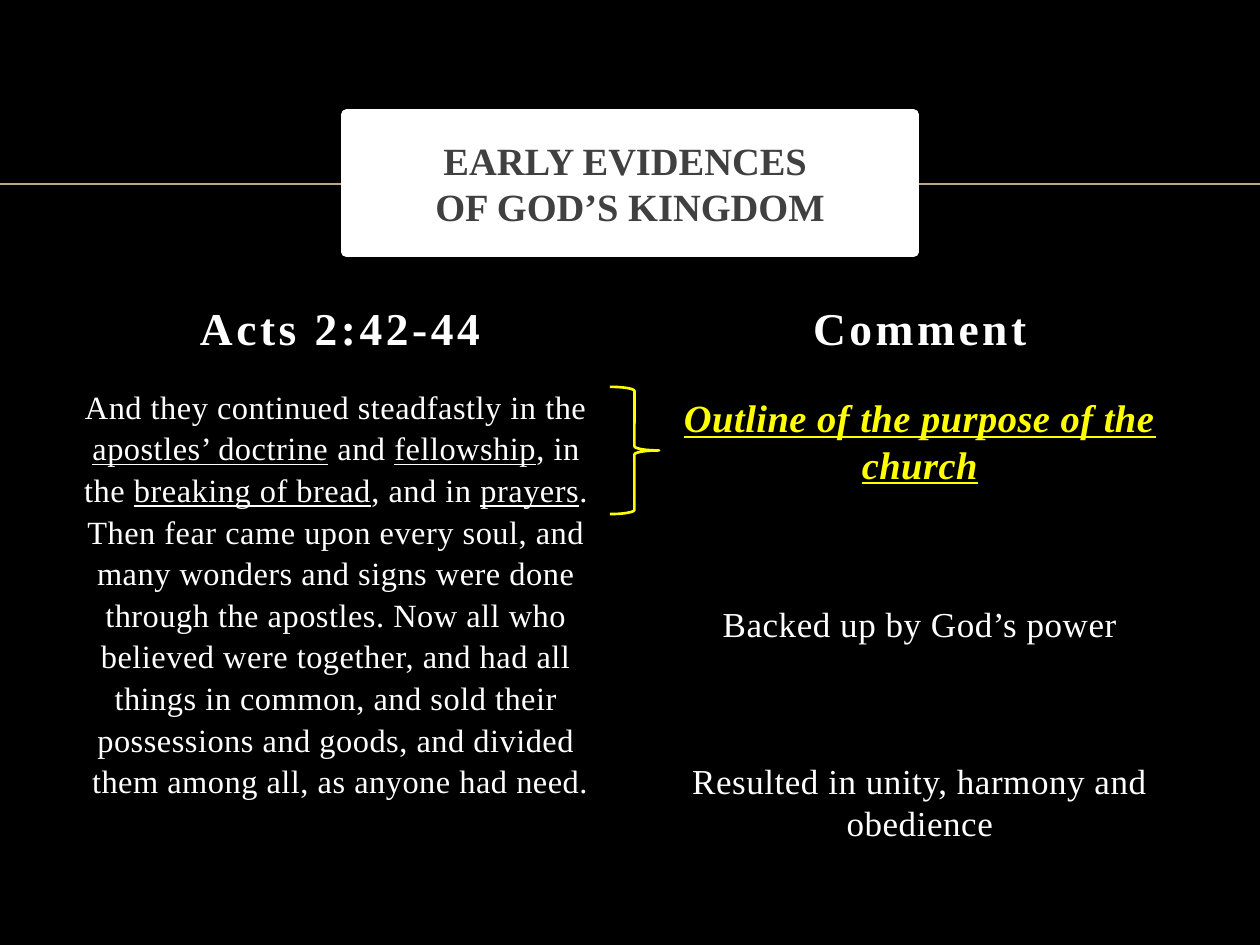
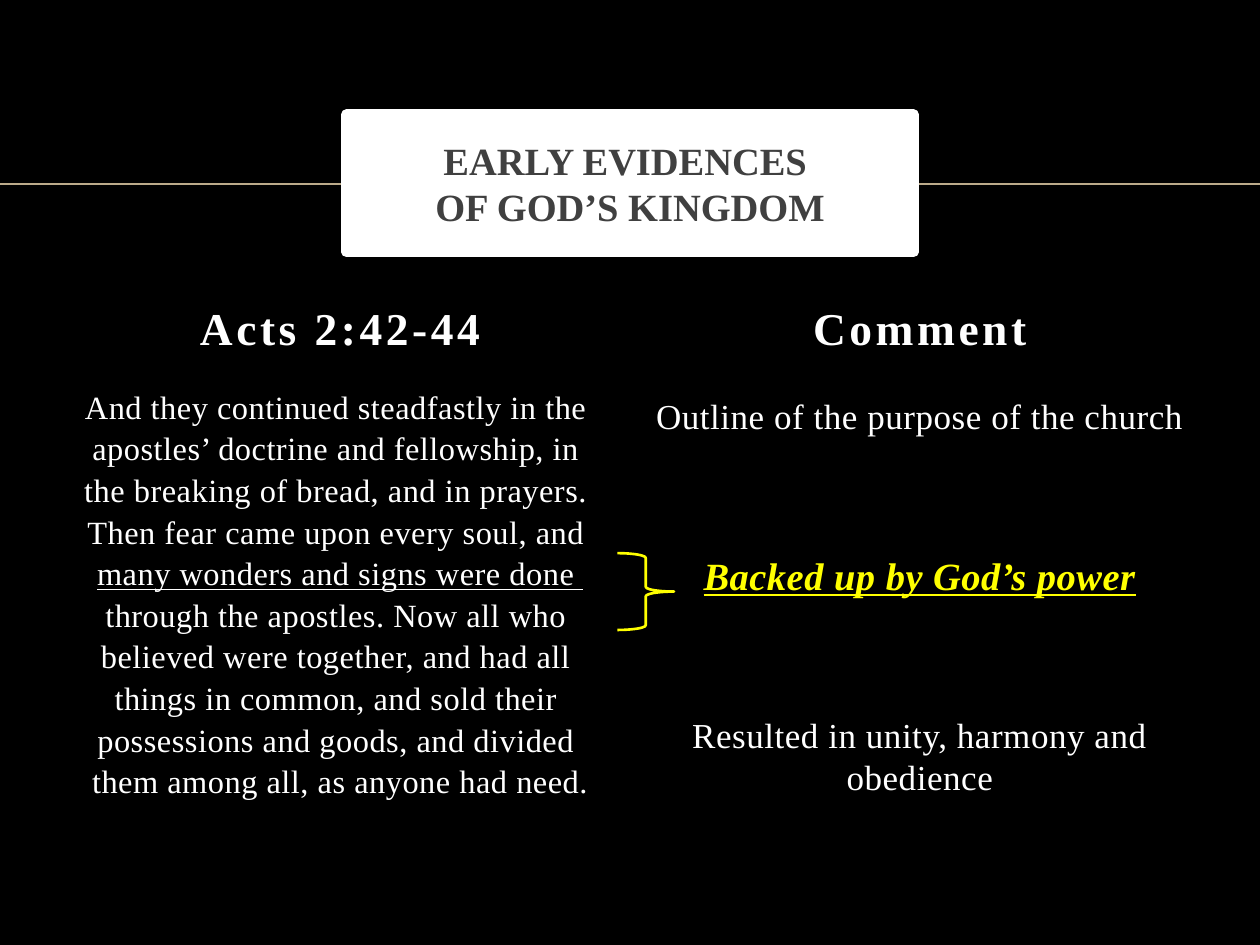
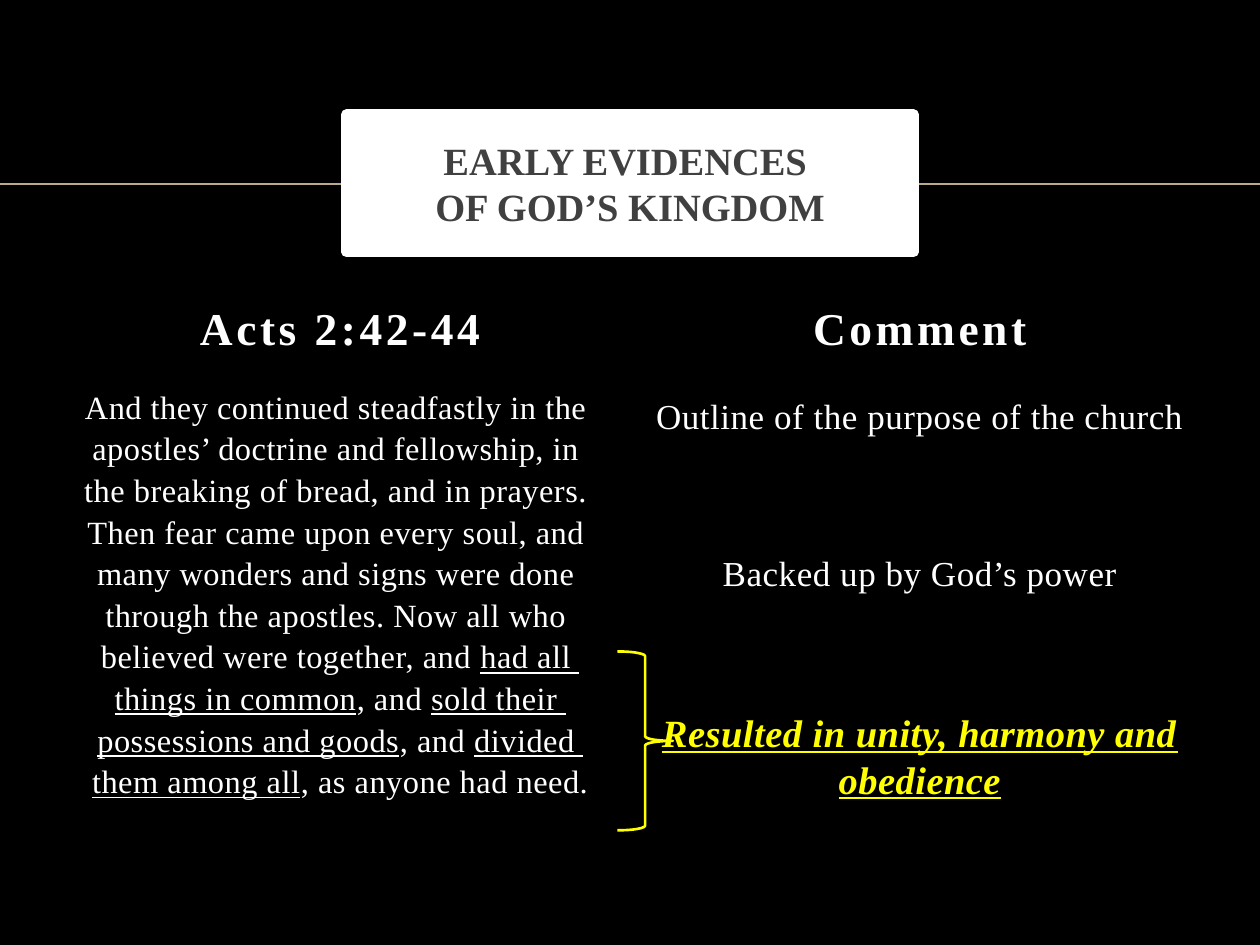
from dataclasses import dataclass

import pptx
import pptx.dml.color
import pptx.enum.shapes
import pptx.enum.text
import pptx.util
from lxml import etree
from pptx.oxml.ns import qn
from pptx.util import Inches

COLORS = {
    "background": "000000",
    "text": "FFFFFF",
    "title": "404040",
    "rule": "BBAA8A",
    "highlight": "FFFF00",
}
FONT = "Times New Roman"
COMPARISON_LAYOUT = 4

TITLE = "EARLY EVIDENCES \vOF GOD’S KINGDOM"
PASSAGE = (
    "And they continued steadfastly in the ",
    "apostles’ doctrine and fellowship, in ",
    "the breaking of bread, and in prayers. ",
    "Then fear came upon every soul, and ",
    "many wonders and signs were done ",
    "through the apostles. Now all who ",
    "believed were together, and had all ",
    "things in common, and sold their ",
    "possessions and goods, and divided ",
    "them among all, as anyone had need.",
)
COMMENTS = (
    "Outline of the purpose of the church",
    "Backed up by God’s power",
    "Resulted in unity, harmony and obedience",
)


@dataclass(frozen=True)
class Box:
    left: float
    top: float
    width: float
    height: float

    def lengths(self) -> tuple:
        return tuple(Inches(n) for n in (self.left, self.top, self.width, self.height))


@dataclass(frozen=True)
class Evidence:
    """One comment brought out, with the phrases of the passage that support it."""
    comment: int
    phrases: tuple[str, ...]
    brace: Box


TITLE_BOX = Box(2.75, 0.91, 4.5, 1.09)
COLUMN_LEFTS = (0.5, 5.1)
HEADING_BOXES = [Box(left, 2.21, 4.4, 0.77) for left in COLUMN_LEFTS]
BODY_BOXES = [Box(left, 3.08, 4.4, 3.51) for left in COLUMN_LEFTS]

EVIDENCES = (
    Evidence(0, ("apostles’ doctrine", "fellowship", "breaking of bread", "prayers"),
             Box(4.84, 3.07, 0.39, 1.01)),
    Evidence(1, ("many wonders and signs were done ",), Box(4.9, 4.39, 0.45, 0.61)),
    Evidence(2, ("had all ", "things in common", "sold their ", "possessions and goods",
                 "divided ", "them among all"),
             Box(4.9, 5.17, 0.44, 1.42)),
)


def rgb(name: str) -> pptx.dml.color.RGBColor:
    return pptx.dml.color.RGBColor.from_string(COLORS[name])


def place(shape, box: Box, middle: bool = False):
    """Move a placeholder to its box and return its text frame."""
    shape.left, shape.top, shape.width, shape.height = box.lengths()
    frame = shape.text_frame
    frame.auto_size = pptx.enum.text.MSO_AUTO_SIZE.NONE
    anchors = pptx.enum.text.MSO_ANCHOR
    frame.vertical_anchor = anchors.MIDDLE if middle else anchors.TOP
    return frame


def start_para(frame, before: float = 0, line: float = 1.0):
    """Return a centred paragraph without bullet, using the empty first one if free."""
    para = frame.paragraphs[0]
    if para.runs:
        para = frame.add_paragraph()
    properties = para._p.get_or_add_pPr()
    properties.set("marL", "0")
    properties.set("indent", "0")
    etree.SubElement(properties, qn("a:buNone"))
    para.alignment = pptx.enum.text.PP_ALIGN.CENTER
    para.line_spacing = line
    para.space_before = pptx.util.Pt(before)
    return para


def add_text(para, text: str, *, size: float, color: str = "text", bold: bool = False,
             italic: bool = False, underline: bool = False, tracking: float = 0) -> None:
    for number, part in enumerate(text.split("\v")):
        if number:
            para.add_line_break()
        span = para.add_run()
        span.text = part
        font = span.font
        font.name, font.size = FONT, pptx.util.Pt(size)
        font.bold, font.italic, font.underline = bold, italic, underline
        font.color.rgb = rgb(color)
        span._r.get_or_add_rPr().set("spc", str(round(tracking * 100)))


def split_marked(line: str, phrases: tuple[str, ...]) -> list[tuple[str, bool]]:
    """Cut a line into pieces, telling which ones are marked phrases."""
    pieces, rest = [], line
    for phrase in phrases:
        if phrase in rest:
            lead, _, rest = rest.partition(phrase)
            pieces += [(lead, False), (phrase, True)]
    pieces.append((rest, False))
    return [piece for piece in pieces if piece[0]]


def fill_passage(frame, phrases: tuple[str, ...]) -> None:
    for number, line in enumerate(PASSAGE):
        para = start_para(frame, before=6 if number else 0, line=0.8)
        for text, marked in split_marked(line, phrases):
            add_text(para, text, size=18.5, underline=marked, tracking=0.3)


def fill_comments(frame, chosen: int) -> None:
    for number, comment in enumerate(COMMENTS):
        para = start_para(frame, before=66 if number else 0)
        if number == chosen:
            add_text(para, comment, size=22, color="highlight", bold=True, italic=True,
                     underline=True, tracking=0.3)
        else:
            add_text(para, comment, size=20, tracking=0.3)


def add_brace(page, box: Box) -> None:
    brace = page.shapes.add_shape(
        pptx.enum.shapes.MSO_SHAPE.RIGHT_BRACE, *box.lengths())
    brace.shadow.inherit = False
    brace.fill.background()
    brace.line.color.rgb = rgb("highlight")
    brace.line.width = pptx.util.Pt(1.5)


def add_layout_rule(page) -> None:
    """Draw the line behind the title once and hand it over to the layout."""
    rule = page.shapes.add_connector(
        pptx.enum.shapes.MSO_CONNECTOR.STRAIGHT,
        Inches(0), Inches(1.46), Inches(10), Inches(1.46))
    rule.line.color.rgb = rgb("rule")
    rule.line.width = pptx.util.Pt(1)
    etree.SubElement(rule.element.spPr, qn("a:effectLst"))
    page.slide_layout.shapes.element.append(rule.element)


def add_evidence_page(deck, evidence: Evidence):
    page = deck.slides.add_slide(deck.slide_layouts[COMPARISON_LAYOUT])
    title, left_heading, passage, right_heading, comments = page.placeholders

    title.fill.solid()
    title.fill.fore_color.rgb = rgb("text")
    title.line.color.rgb = rgb("text")
    title.line.width = pptx.util.Pt(6)
    frame = place(title, TITLE_BOX, middle=True)
    add_text(start_para(frame), TITLE, size=22, color="title", bold=True)

    headings = ((left_heading, "Acts 2:42-44"), (right_heading, "Comment"))
    for (heading, text), box in zip(headings, HEADING_BOXES):
        frame = place(heading, box, middle=True)
        add_text(start_para(frame), text, size=26, bold=True, tracking=2)

    fill_passage(place(passage, BODY_BOXES[0]), evidence.phrases)
    fill_comments(place(comments, BODY_BOXES[1]), evidence.comment)
    add_brace(page, evidence.brace)
    return page


def main() -> None:
    deck = pptx.Presentation()
    deck.slide_width, deck.slide_height = Inches(10), Inches(7.5)
    background = deck.slide_master.background.fill
    background.solid()
    background.fore_color.rgb = rgb("background")

    pages = [add_evidence_page(deck, evidence) for evidence in EVIDENCES]
    add_layout_rule(pages[0])
    deck.save("out.pptx")


if __name__ == "__main__":
    main()
